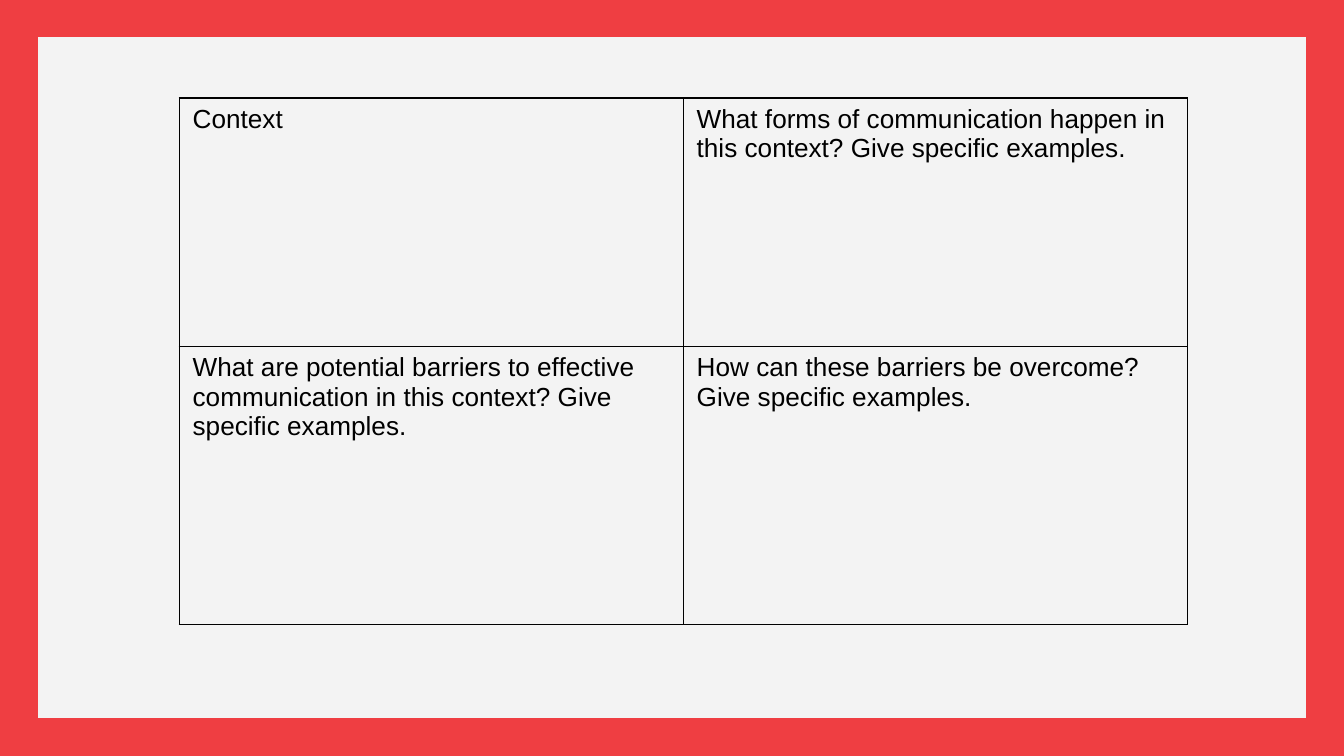
from lxml.etree import SubElement
from pptx import Presentation
from pptx.dml.color import RGBColor
from pptx.enum.shapes import MSO_SHAPE
from pptx.oxml.ns import qn
from pptx.util import Pt

PROMPTS = [
    ["Context",
     "What forms of communication happen in this context? Give specific examples."],
    ["What are potential barriers to effective communication in this context? Give specific examples.",
     "How can these barriers be overcome? Give specific examples."],
]
HEIGHTS = [133, 149]


def color(code):
    return RGBColor.from_string(code)


def block(slide, kind, box, code):
    shape = slide.shapes.add_shape(kind, *map(Pt, box))
    shape.shadow.inherit = False
    shape.fill.solid()
    shape.fill.fore_color.rgb = color(code)
    shape.line.fill.background()
    return shape


def backdrop(slide, box):
    panel = block(slide, MSO_SHAPE.RECTANGLE, box, "F2F2F2")
    tint = panel.fill._xPr.find(".//" + qn("a:srgbClr"))
    SubElement(tint, qn("a:alpha"), val="86000")
    frame = block(slide, MSO_SHAPE.FRAME, box, "EF3E42")
    frame.adjustments[0] = 0.05


def border(cell, code, width):
    props = cell._tc.get_or_add_tcPr()
    for index, side in enumerate(("lnL", "lnR", "lnT", "lnB")):
        line = props.makeelement(qn("a:" + side), {"w": str(Pt(width))})
        fill = SubElement(line, qn("a:solidFill"))
        SubElement(fill, qn("a:srgbClr"), val=code)
        props.insert(index, line)


def worksheet(slide, box):
    count = len(PROMPTS[0])
    table = slide.shapes.add_table(len(PROMPTS), count, *map(Pt, box)).table
    table.first_row = table.horz_banding = False
    for column in table.columns:
        column.width = Pt(box[2] / count)
    for row, height, prompts in zip(table.rows, HEIGHTS, PROMPTS):
        row.height = Pt(height)
        for cell, prompt in zip(row.cells, prompts):
            cell.fill.background()
            border(cell, "000000", 0.75)
            run = cell.text_frame.paragraphs[0].add_run()
            run.text = prompt
            run.font.name = "Arial"
            run.font.size = Pt(14)
            run.font.color.rgb = color("000000")


def main():
    deck = Presentation()
    deck.slide_width, deck.slide_height = Pt(720), Pt(405)
    slide = deck.slides.add_slide(deck.slide_layouts[6])
    backdrop(slide, (0, -0.5, 720, 405.5))
    worksheet(slide, (96, 52.5, 540, sum(HEIGHTS)))
    deck.save("out.pptx")


if __name__ == "__main__":
    main()
